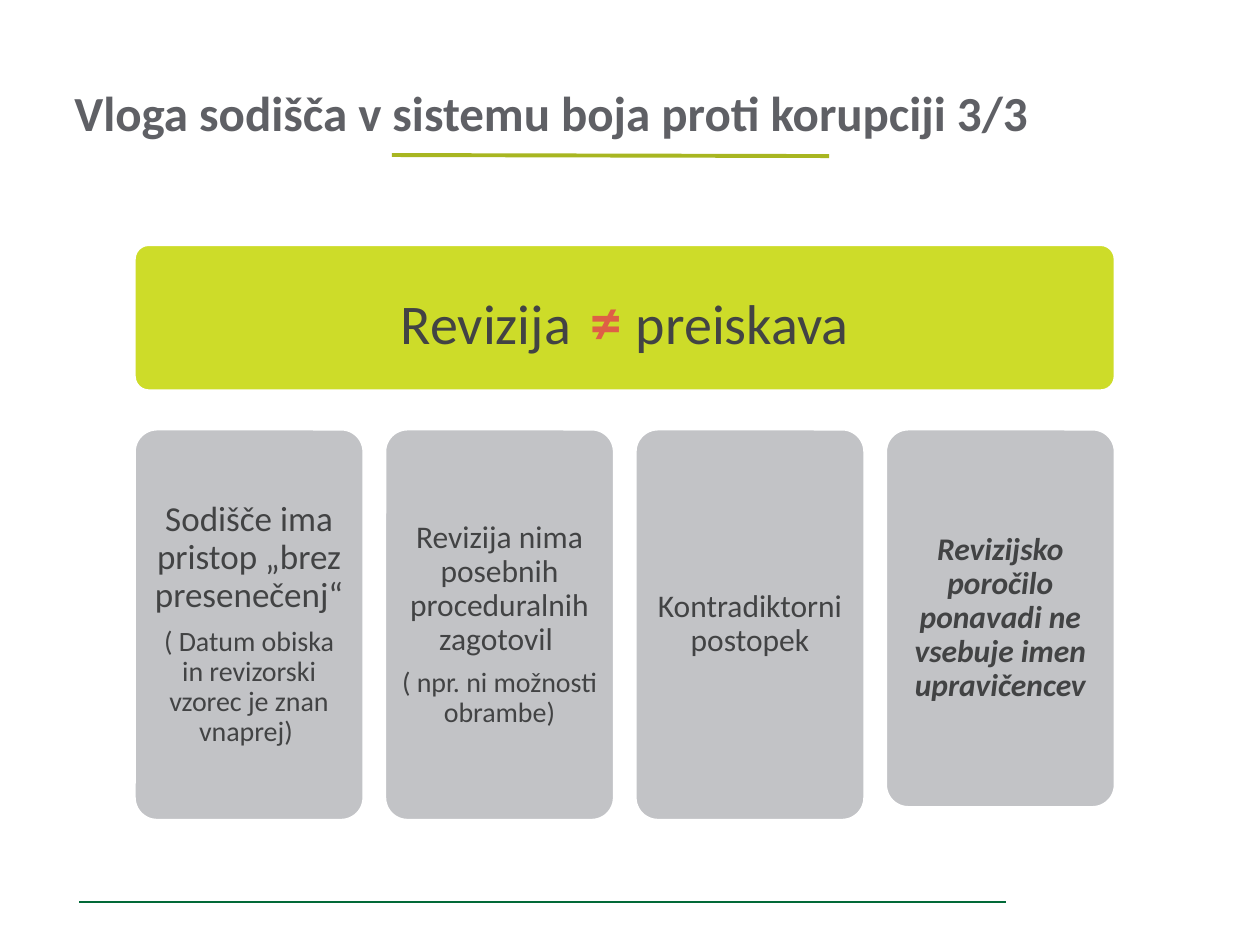
from lxml.etree import SubElement
from pptx import Presentation
from pptx.dml.color import RGBColor
from pptx.enum.shapes import MSO_CONNECTOR, MSO_SHAPE
from pptx.enum.text import MSO_ANCHOR, PP_ALIGN
from pptx.oxml.ns import qn
from pptx.util import Pt

COLORS = {
    "white": "FFFFFF", "text": "424344", "title": "5F6065", "lime": "CDDC29",
    "gray": "C2C3C6", "red": "DE5F46", "underline": "A8B621", "footer": "026938",
}


def color(name):
    return RGBColor.from_string(COLORS[name])


def add_panel(left, top, width, height, fill, inset):
    panel = slide.shapes.add_shape(
        MSO_SHAPE.ROUNDED_RECTANGLE, Pt(left), Pt(top), Pt(width), Pt(height))
    panel.adjustments[0] = 0.1
    panel.shadow.inherit = False
    panel.fill.solid()
    panel.fill.fore_color.rgb = color(fill)
    panel.line.color.rgb = color("white")
    panel.line.width = Pt(2)
    frame = panel.text_frame
    frame.word_wrap = True
    frame.vertical_anchor = MSO_ANCHOR.MIDDLE
    frame.margin_left = frame.margin_right = Pt(inset)
    frame.margin_top = frame.margin_bottom = Pt(inset)
    return frame


prs = Presentation()
prs.slide_width, prs.slide_height = Pt(720), Pt(540)
slide = prs.slides.add_slide(prs.slide_layouts[6])

rules = [
    (45.4, 515.5, 574.9, 515.5, "footer", 0.75),
    (224, 88.6, 473.8, 89.2, "underline", 2.25),
]
for x1, y1, x2, y2, tint, weight in rules:
    rule = slide.shapes.add_connector(
        MSO_CONNECTOR.STRAIGHT, Pt(x1), Pt(y1), Pt(x2), Pt(y2))
    rule.line.color.rgb = color(tint)
    rule.line.width = Pt(weight)
    SubElement(rule._element.spPr, qn("a:effectLst"))

heading = slide.shapes.add_textbox(Pt(42.5), Pt(38.2), Pt(697.7), Pt(43.2)).text_frame
heading.word_wrap = True
heading.vertical_anchor = MSO_ANCHOR.BOTTOM
heading.margin_left = heading.margin_right = 0
heading.margin_top = heading.margin_bottom = 0
title = heading.paragraphs[0]
title.text = "Vloga sodišča v sistemu boja proti korupciji 3/3"
title.line_spacing = 0.9
title.font.name = "Calibri"
title.font.size = Pt(28)
title.font.bold = True
title.font.color.rgb = color("title")

LEFT, CARD_TOP, CARD_WIDTH, PITCH = 76.6, 245, 131.5, 143.1

banner = add_panel(LEFT, 139.6, 3 * PITCH + CARD_WIDTH, 83.9, "lime", 9.6)
claim = banner.paragraphs[0]
claim.alignment = PP_ALIGN.CENTER
claim.line_spacing = 0.9
claim.space_after = Pt(11.2)
claim.font.name = "Calibri"
for words, size, tint, bold in [
    ("Revizija", 32, "text", False),
    (" ", 48, "text", False),
    ("≠ ", 36, "red", True),
    ("preiskava", 32, "text", False),
]:
    run = claim.add_run()
    run.text = words
    run.font.size = Pt(size)
    run.font.bold = bold
    run.font.color.rgb = color(tint)

cards = [
    (223.9, False, [("Sodišče ima pristop „brez presenečenj“ ", 20),
                    ("( Datum obiska in revizorski vzorec je znan vnaprej) ", 16)]),
    (223.9, False, [("Revizija nima posebnih proceduralnih zagotovil ", 18),
                    ("( npr. ni možnosti obrambe)", 16)]),
    (223.9, False, [("Kontradiktorni postopek", 18)]),
    (216.6, True, [("Revizijsko poročilo ponavadi ne vsebuje imen upravičencev", 18)]),
]
for column, (height, emphasis, statements) in enumerate(cards):
    inset = statements[0][1] * 0.3
    card = add_panel(LEFT + column * PITCH, CARD_TOP, CARD_WIDTH, height, "gray", inset)
    for row, (words, size) in enumerate(statements):
        statement = card.add_paragraph() if row else card.paragraphs[0]
        statement.text = words
        statement.alignment = PP_ALIGN.CENTER
        statement.line_spacing = 0.9
        statement.space_after = Pt(round(size * 0.35, 1))
        statement.font.name = "Calibri"
        statement.font.size = Pt(size)
        statement.font.bold = emphasis
        statement.font.italic = emphasis
        statement.font.color.rgb = color("text")

prs.save("out.pptx")
